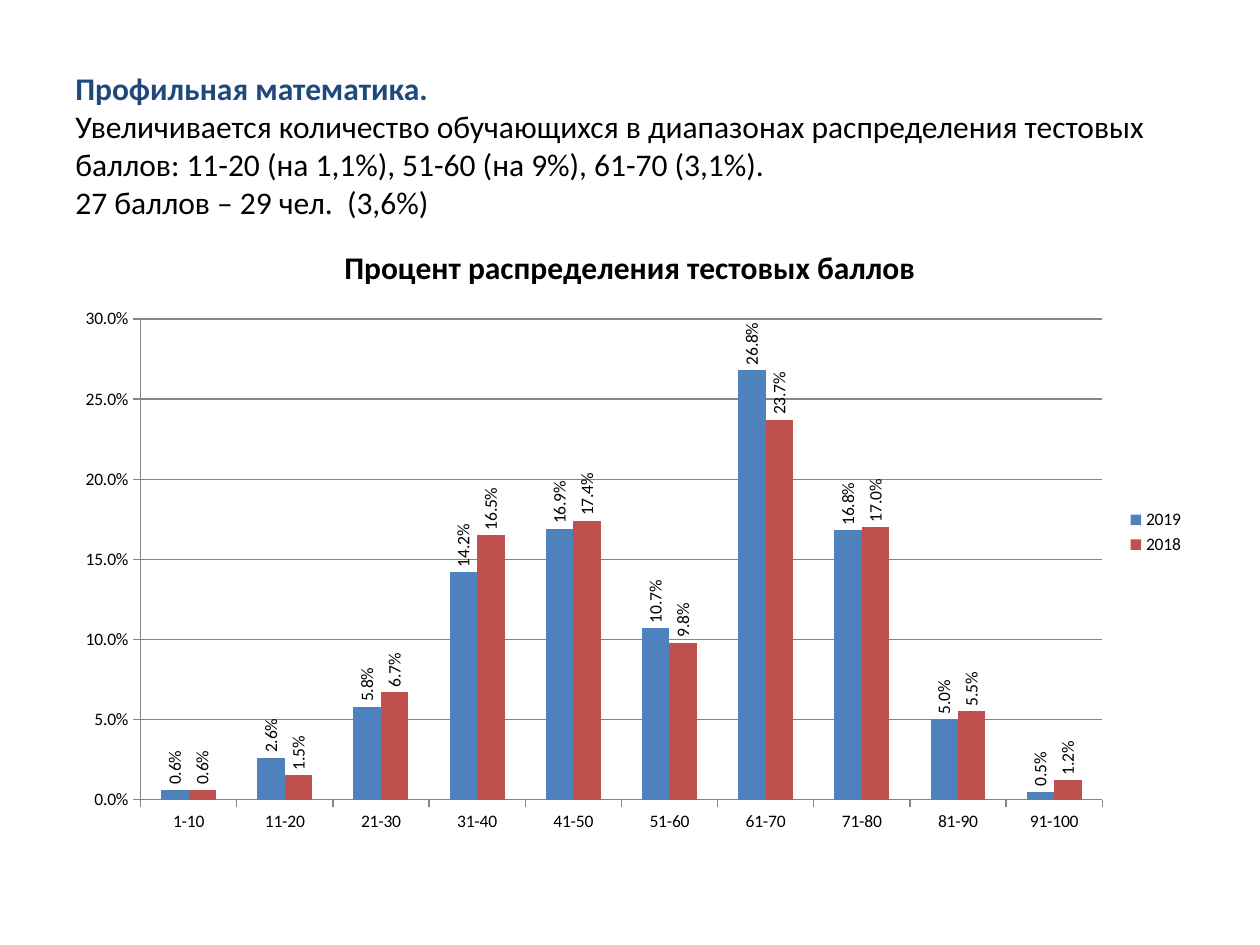
from dataclasses import dataclass

from pptx import Presentation
from pptx.chart.data import CategoryChartData
from pptx.chart.series import BarSeries
from pptx.dml.color import RGBColor
from pptx.enum.chart import XL_CHART_TYPE as ChartType
from pptx.enum.chart import XL_LABEL_POSITION as LabelPosition
from pptx.enum.chart import XL_LEGEND_POSITION as LegendPosition
from pptx.enum.chart import XL_TICK_MARK as TickMark
from pptx.enum.text import MSO_ANCHOR as Anchor
from pptx.oxml.ns import qn
from pptx.slide import Slide
from pptx.text.text import Font
from pptx.util import Pt

FONT = "Calibri"
BLACK = "000000"
NAVY = "1F497D"
GRAY = "868686"
PERCENT = "0.0%"


@dataclass
class Span:
    text: str
    color: str = BLACK
    bold: bool = False
    ends_line: bool = True


@dataclass
class YearScores:
    year: str
    color: str
    shares: list[float]


HEADING = [
    Span("Профильная математика. ", NAVY, True),
    Span(
        "Увеличивается количество обучающихся в диапазонах распределения "
        "тестовых баллов: 11-20 (на 1,1%), 51-60 (на 9%), 61-70 (3,1%)."
    ),
    Span("27 баллов – 29 чел.  (3,6%)", ends_line=False),
]
RANGES = ["1-10"] + [f"{start}-{start + 9}" for start in range(11, 100, 10)]
YEARS = [
    YearScores("2019", "4F81BD",
               [0.006, 0.026, 0.058, 0.142, 0.169, 0.107, 0.268, 0.168, 0.05, 0.005]),
    YearScores("2018", "C0504D",
               [0.006, 0.015, 0.067, 0.165, 0.174, 0.098, 0.237, 0.17, 0.055, 0.012]),
]


def rgb(value: str) -> RGBColor:
    return RGBColor.from_string(value)


def style_font(font: Font, size: float, color: str = BLACK, bold: bool = False) -> None:
    font.name = FONT
    font.size = Pt(size)
    font.bold = bold
    font.color.rgb = rgb(color)


def add_heading(page: Slide, spans: list[Span]) -> None:
    box = page.shapes.add_textbox(Pt(36), Pt(37.5), Pt(648), Pt(90.7))
    frame = box.text_frame
    frame.word_wrap = True
    frame.vertical_anchor = Anchor.MIDDLE
    para = frame.paragraphs[0]
    for span in spans:
        run = para.add_run()
        run.text = span.text
        style_font(run.font, 18, span.color, span.bold)
        if span.ends_line:
            para.add_line_break()


def style_series(series: BarSeries, color: str) -> None:
    series.format.fill.solid()
    series.format.fill.fore_color.rgb = rgb(color)
    series.invert_if_negative = False
    labels = series.data_labels
    labels.show_value = True
    labels.position = LabelPosition.OUTSIDE_END
    labels.number_format = PERCENT
    labels.number_format_is_linked = False
    style_font(labels.font, 10)
    body = labels._element.find(qn("c:txPr")).find(qn("a:bodyPr"))
    body.set("rot", "-5400000")
    body.set("vert", "horz")


def add_score_chart(page: Slide, years: list[YearScores]) -> None:
    data = CategoryChartData(number_format=PERCENT)
    data.categories = RANGES
    for scores in years:
        data.add_series(scores.year, scores.shares)
    chart = page.shapes.add_chart(
        ChartType.COLUMN_CLUSTERED, Pt(36), Pt(126), Pt(648), Pt(356.4), data
    ).chart
    style_font(chart.font, 10)

    chart.has_title = True
    run = chart.chart_title.text_frame.paragraphs[0].add_run()
    run.text = "Процент распределения тестовых баллов"
    style_font(run.font, 18, bold=True)
    chart.chart_title.include_in_layout = False

    chart.has_legend = True
    chart.legend.position = LegendPosition.RIGHT
    chart.legend.include_in_layout = False
    style_font(chart.legend.font, 10)

    plot = chart.plots[0]
    plot.vary_by_categories = False
    plot.gap_width = 150
    plot.overlap = 0
    for series, scores in zip(plot.series, years):
        style_series(series, scores.color)

    value_axis = chart.value_axis
    value_axis.minimum_scale = 0
    value_axis.maximum_scale = 0.3
    value_axis.major_unit = 0.05
    value_axis.has_major_gridlines = True
    value_axis.tick_labels.number_format = PERCENT
    value_axis.tick_labels.number_format_is_linked = False
    for axis in (chart.category_axis, value_axis):
        axis.major_tick_mark = TickMark.OUTSIDE
        axis.minor_tick_mark = TickMark.NONE
        style_font(axis.tick_labels.font, 10)
    for lined in (chart.category_axis, value_axis, value_axis.major_gridlines):
        lined.format.line.color.rgb = rgb(GRAY)
        lined.format.line.width = Pt(0.75)


def main() -> None:
    deck = Presentation()
    deck.slide_width = Pt(720)
    deck.slide_height = Pt(540)
    page = deck.slides.add_slide(deck.slide_layouts[6])
    add_heading(page, HEADING)
    add_score_chart(page, YEARS)
    deck.save("out.pptx")


if __name__ == "__main__":
    main()
